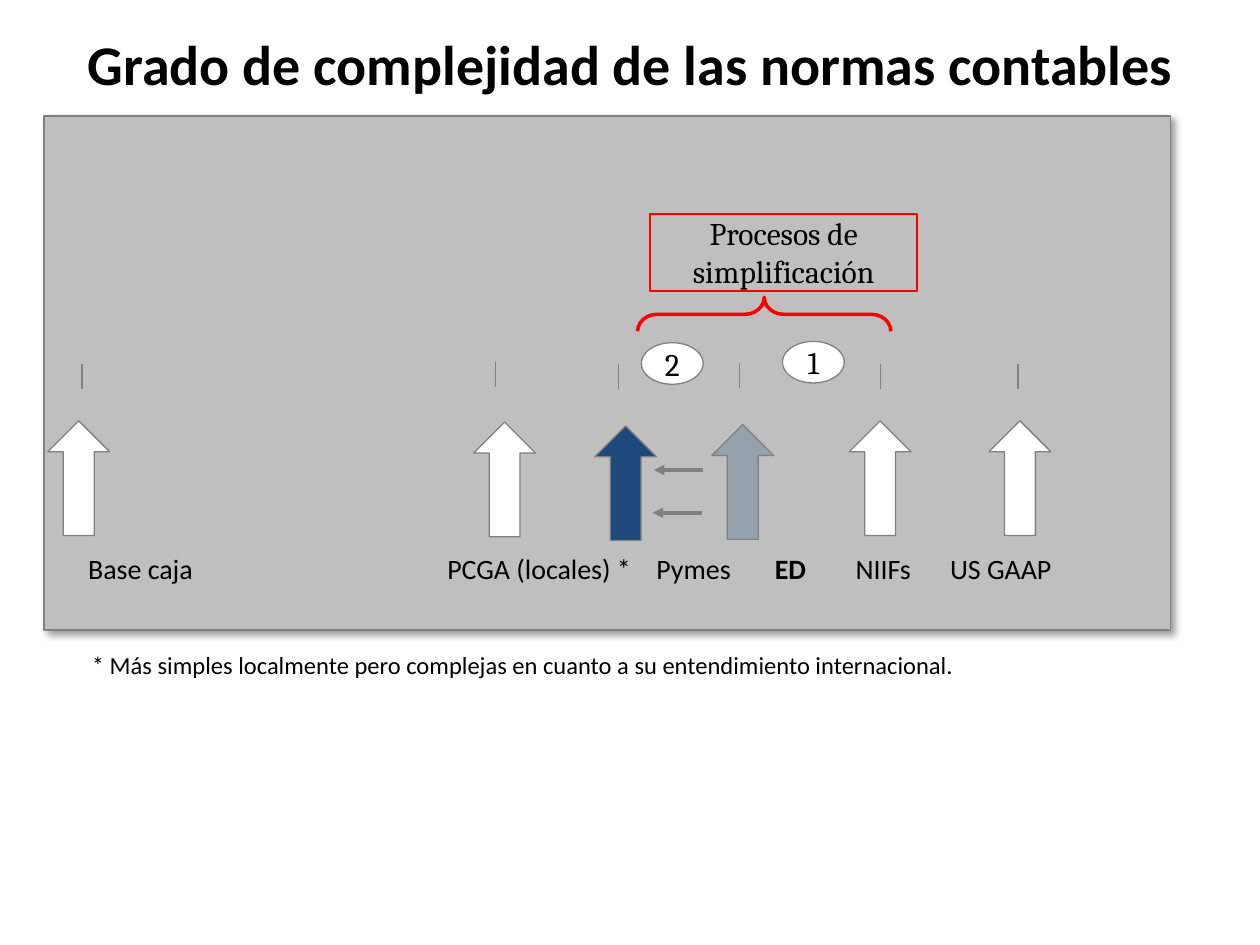
from lxml import etree
from pptx import Presentation
from pptx.dml.color import RGBColor
from pptx.enum.shapes import MSO_CONNECTOR, MSO_SHAPE
from pptx.enum.text import MSO_ANCHOR, MSO_AUTO_SIZE, PP_ALIGN
from pptx.oxml.ns import qn
from pptx.util import Inches, Pt

STRAIGHT = MSO_CONNECTOR.STRAIGHT
RECT, OVAL = MSO_SHAPE.RECTANGLE, MSO_SHAPE.OVAL
UP_ARROW, BRACE = MSO_SHAPE.UP_ARROW, MSO_SHAPE.LEFT_BRACE
CENTER, MIDDLE = PP_ALIGN.CENTER, MSO_ANCHOR.MIDDLE
FIT_SHAPE = MSO_AUTO_SIZE.SHAPE_TO_FIT_TEXT

BLACK, WHITE, GRAY, PANEL = "000000", "FFFFFF", "808080", "BFBFBF"
RED, NAVY = "FF0000", "1F497D"

TITLE = "Grado de complejidad de las normas contables"
PROCESS = "Procesos de simplificación"
FOOTNOTE = ("* Más simples localmente pero complejas en cuanto a "
            "su entendimiento internacional.")
# label, label x, tick (x, top), arrow (x, top), arrow fill, fill opacity %
STANDARDS = [
    ("Base caja", 0.70, (0.65, 2.89), (0.38, 3.34), WHITE, 100),
    ("PCGA (locales) *", 3.55, (3.93, 2.87), (3.76, 3.35), WHITE, 100),
    ("Pymes", 5.21, (4.91, 2.89), (4.72, 3.38), NAVY, 100),
    ("ED", 6.15, (5.87, 2.88), (5.65, 3.37), NAVY, 25),
    ("NIIFs", 6.79, (6.99, 2.89), (6.74, 3.34), WHITE, 100),
    ("US GAAP", 7.54, (8.08, 2.89), (7.85, 3.34), WHITE, 100),
]
STEPS = [("1", 6.21, 2.71), ("2", 5.09, 2.72)]
MOVES = [(5.58, 3.73), (5.57, 4.07)]
TICK_HEIGHT, MOVE_LENGTH = 0.2, 0.39
LABELS_LEFT, INSET = 0.43, 0.07


def rgb(color):
    return RGBColor.from_string(color)


def add_box(parent, kind, left, top, width, height, fill=None, line=GRAY, weight=0.75):
    box = parent.add_shape(kind, *map(Inches, (left, top, width, height)))
    box.shadow.inherit = False
    if fill:
        box.fill.solid()
        box.fill.fore_color.rgb = rgb(fill)
    else:
        box.fill.background()
    box.line.color.rgb = rgb(line)
    box.line.width = Pt(weight)
    return box


def add_line(parent, x1, y1, x2, y2, weight=0.75):
    line = parent.add_connector(STRAIGHT, *map(Inches, (x1, y1, x2, y2)))
    line.line.color.rgb = rgb(GRAY)
    line.line.width = Pt(weight)
    etree.SubElement(line._element.spPr, qn("a:effectLst"))
    return line


def set_insets(frame):
    frame.margin_left = frame.margin_right = Inches(INSET)
    frame.margin_top = frame.margin_bottom = 0


def style(font, size, name="Calibri", bold=False):
    font.size, font.name, font.bold = Pt(size), name, bold
    font.color.rgb = rgb(BLACK)


def write_centered(box, text, wrap, anchor):
    frame = box.text_frame
    set_insets(frame)
    frame.word_wrap, frame.vertical_anchor = wrap, anchor
    frame.text = text
    frame.paragraphs[0].alignment = CENTER
    return frame.paragraphs[0].font


def set_opacity(box, percent):
    color = box._element.spPr.find(qn("a:solidFill"))[0]
    etree.SubElement(color, qn("a:alpha"), val=str(percent * 1000))


def add_panel_shadow(panel):
    effects = panel._element.spPr.find(qn("a:effectLst"))
    shadow = etree.SubElement(effects, qn("a:outerShdw"), blurRad=str(Pt(4)),
                              dist=str(Pt(3)), dir="2700000", rotWithShape="0")
    color = etree.SubElement(shadow, qn("a:srgbClr"), val=BLACK)
    etree.SubElement(color, qn("a:alpha"), val="40000")


def add_tab_stops(paragraph, positions):
    stops = etree.SubElement(paragraph._p.get_or_add_pPr(), qn("a:tabLst"))
    for position in positions:
        etree.SubElement(stops, qn("a:tab"), pos=str(Inches(position)), algn="l")


prs = Presentation()
prs.slide_width, prs.slide_height = Inches(10), Inches(7.5)
slide = prs.slides.add_slide(prs.slide_layouts[6])
diagram = slide.shapes.add_group_shape().shapes

add_panel_shadow(add_box(diagram, RECT, 0.35, 0.92, 8.94, 4.08, PANEL))

for _, _, (tick_x, tick_top), (left, top), fill, opacity in STANDARDS:
    add_line(diagram, tick_x, tick_top, tick_x, tick_top + TICK_HEIGHT)
    arrow = add_box(diagram, UP_ARROW, left, top, 0.49, 0.91, fill)
    if opacity < 100:
        set_opacity(arrow, opacity)

brace = add_box(diagram, BRACE, 5.93, 1.49, 0.27, 2.01, line=RED, weight=2)
brace.rotation = 90
brace.adjustments[0], brace.adjustments[1] = 0.57, 0.5

process = add_box(diagram, RECT, 5.16, 1.7, 2.12, 0.61, line=RED, weight=1)
style(write_centered(process, PROCESS, True, MSO_ANCHOR.TOP), 18, "Cambria")
process.text_frame.auto_size = FIT_SHAPE

for x, y in MOVES:
    move = add_line(diagram, x, y, x - MOVE_LENGTH, y, weight=2)
    etree.SubElement(move.line._get_or_add_ln(), qn("a:tailEnd"), type="triangle")

for number, left, top in STEPS:
    step = add_box(diagram, OVAL, left, top, 0.49, 0.33, WHITE)
    style(write_centered(step, number, False, MIDDLE), 18, "Cambria")

title = slide.shapes.add_textbox(Inches(0.59), 0, Inches(8.83), Inches(1))
style(write_centered(title, TITLE, True, MIDDLE), 32, bold=True)

labels = slide.shapes.add_textbox(*map(Inches, (LABELS_LEFT, 4.38, 9.21, 1.04)))
frame = labels.text_frame
set_insets(frame)
frame.word_wrap, frame.auto_size = True, FIT_SHAPE
names = frame.paragraphs[0]
add_tab_stops(names, [x - LABELS_LEFT - INSET for _, x, *_ in STANDARDS])
for name, *_ in STANDARDS:
    run = names.add_run()
    run.text = "\t" + name
    style(run.font, 16, bold=name == "ED")

footnote = frame.add_paragraph()
footnote.text = FOOTNOTE
footnote.space_before = Pt(37)
footnote._p.get_or_add_pPr().set("marL", str(Inches(0.23)))
style(footnote.font, 14)

prs.save("out.pptx")
